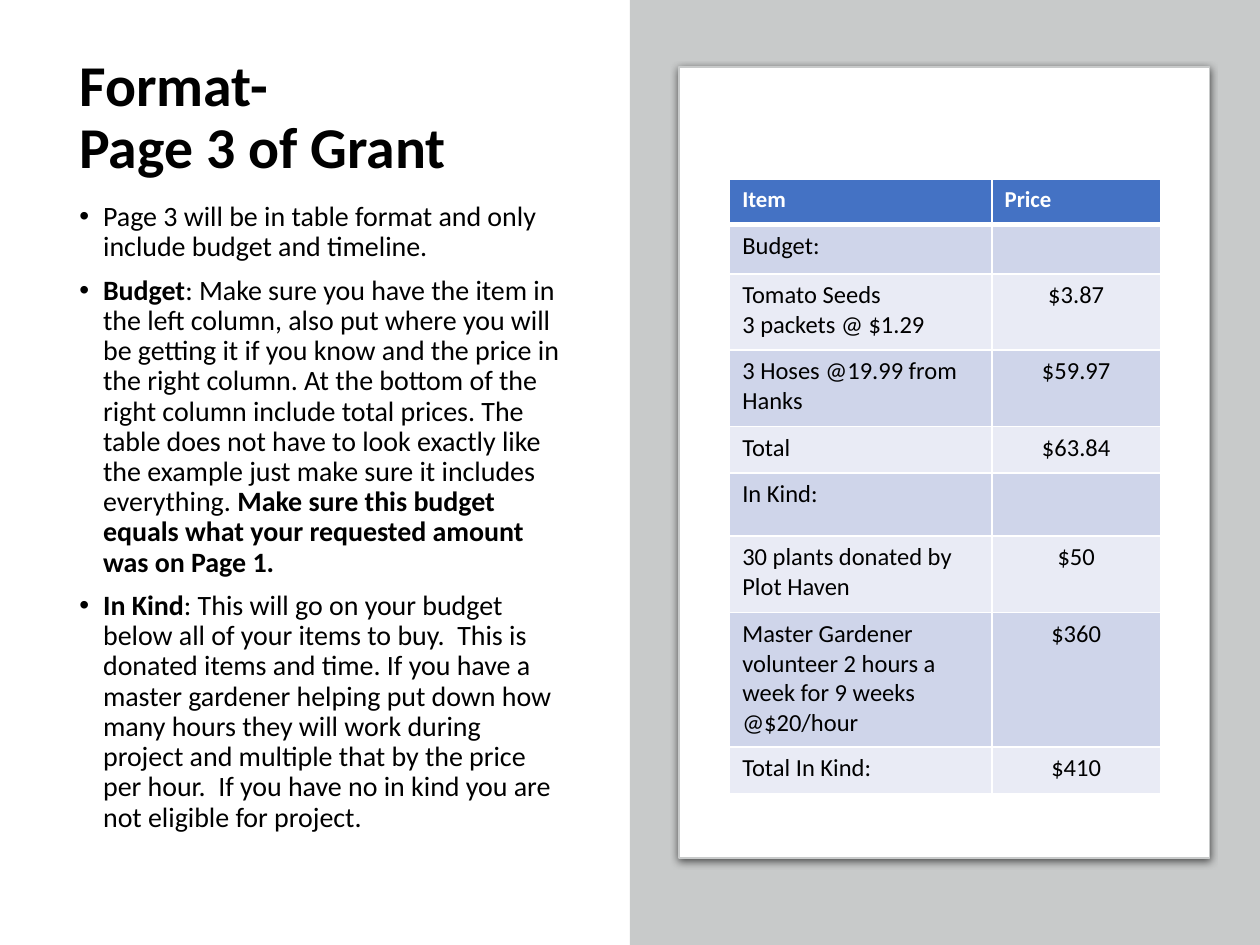
from lxml.etree import SubElement
from pptx import Presentation
from pptx.dml.color import RGBColor
from pptx.enum.shapes import MSO_SHAPE
from pptx.enum.text import MSO_ANCHOR, PP_ALIGN
from pptx.oxml import parse_xml
from pptx.oxml.ns import nsdecls, qn
from pptx.util import Cm, Pt

BLACK = RGBColor(0x00, 0x00, 0x00)
WHITE = RGBColor(0xFF, 0xFF, 0xFF)
GRAY = RGBColor(0xC8, 0xCA, 0xCA)
BLUE = RGBColor(0x44, 0x72, 0xC4)
BANDS = (RGBColor(0xE9, 0xEB, 0xF5), RGBColor(0xCF, 0xD5, 0xEA))
FONT = "Calibri"

TITLE = [("Format- \vPage 3 of Grant", True)]
BULLETS = [
    [("Page 3 will be in table format and only include budget and timeline.", False)],
    [
        ("Budget", True),
        (": Make sure you have the item in the left column, also put where you will be "
         "getting it if you know and the price in the right column. At the bottom of the "
         "right column include total prices. The table does not have to look exactly like "
         "the example just make sure it includes everything. ", False),
        ("Make sure this budget equals what your requested amount was on Page 1.", True),
    ],
    [
        ("In Kind", True),
        (": This will go on your budget below all of your items to buy.  This is donated "
         "items and time. If you have a master gardener helping put down how many hours "
         "they will work during project and multiple that by the price per hour.  If you "
         "have no in kind you are not eligible for project.", False),
    ],
]
BUDGET_ROWS = [
    ("Item", "Price", 0.92),
    ("Budget:", "", 0.99),
    ("Tomato Seeds\n3 packets @ $1.29", "$3.87", 1.54),
    ("3 Hoses @19.99 from Hanks", "$59.97", 1.54),
    ("Total", "$63.84", 0.94),
    ("In Kind:", "", 1.27),
    ("30 plants donated by Plot Haven", "$50", 1.54),
    ("Master Gardener volunteer 2 hours a week for 9 weeks @$20/hour", "$360", 2.71),
    ("Total In Kind:", "$410", 0.94),
]
COLUMN_WIDTHS = (5.29, 3.39)


def format_font(font, size, color, bold):
    font.name = FONT
    font.size = Pt(size)
    font.color.rgb = color
    font.bold = bold


def add_panel(slide, kind, left, top, width, height, fill):
    shape = slide.shapes.add_shape(kind, Cm(left), Cm(top), Cm(width), Cm(height))
    shape.shadow.inherit = False
    shape.fill.solid()
    shape.fill.fore_color.rgb = fill
    shape.line.fill.background()
    return shape


def add_text(slide, top, height, paragraphs, size):
    box = slide.shapes.add_textbox(Cm(1.35), Cm(top), Cm(10.31), Cm(height))
    frame = box.text_frame
    frame.word_wrap = True
    for index, parts in enumerate(paragraphs):
        paragraph = frame.add_paragraph() if index else frame.paragraphs[0]
        paragraph.text = "".join(text for text, _ in parts) if len(parts) == 1 else ""
        paragraph.line_spacing = 0.9
        if len(parts) > 1:
            for text, _ in parts:
                paragraph.add_run().text = text
        for position, run in enumerate(paragraph.runs):
            bold = parts[min(position, len(parts) - 1)][1]
            format_font(run.font, size, BLACK, bold)
    return frame


def add_bullet(paragraph):
    paragraph.space_before = Pt(7.5)
    properties = paragraph._p.get_or_add_pPr()
    properties.set("marL", str(Cm(0.48)))
    properties.set("indent", str(-Cm(0.48)))
    SubElement(properties, qn("a:buFont"), typeface="Arial")
    SubElement(properties, qn("a:buChar"), char="•")


def set_borders(cell, widths):
    properties = cell._tc.get_or_add_tcPr()
    for index, (side, width) in enumerate(zip("LRTB", widths)):
        properties.insert(index, parse_xml(
            f'<a:ln{side} {nsdecls("a")} w="{Pt(width)}"><a:solidFill>'
            f'<a:srgbClr val="{WHITE}"/></a:solidFill></a:ln{side}>'))


def add_budget_table(slide):
    heights = [row[2] for row in BUDGET_ROWS]
    table = slide.shapes.add_table(
        len(BUDGET_ROWS), len(COLUMN_WIDTHS), Cm(14.71), Cm(3.61),
        Cm(sum(COLUMN_WIDTHS)), Cm(sum(heights))).table
    for column, width in zip(table.columns, COLUMN_WIDTHS):
        column.width = Cm(width)
    for row_index, (item, price, height) in enumerate(BUDGET_ROWS):
        table.rows[row_index].height = Cm(height)
        header = row_index == 0
        for column_index, text in enumerate((item, price)):
            cell = table.cell(row_index, column_index)
            cell.fill.solid()
            cell.fill.fore_color.rgb = BLUE if header else BANDS[row_index % 2]
            set_borders(cell, (1, 1, 3 if row_index == 1 else 1, 3 if header else 1))
            cell.text_frame.text = text
            for paragraph in cell.text_frame.paragraphs:
                if column_index == 1 and not header:
                    paragraph.alignment = PP_ALIGN.CENTER
                size, color = (13, WHITE) if header else (14, BLACK)
                if not text:
                    paragraph.font.size = Pt(size)
                for run in paragraph.runs:
                    format_font(run.font, size, color, header)


def main():
    presentation = Presentation()
    presentation.slide_width = Cm(25.4)
    presentation.slide_height = Cm(19.05)
    slide = presentation.slides.add_slide(presentation.slide_layouts[6])
    slide.background.fill.solid()
    slide.background.fill.fore_color.rgb = WHITE

    add_panel(slide, MSO_SHAPE.RECTANGLE, 12.7, 0, 12.7, 19.05, GRAY)
    card = add_panel(slide, MSO_SHAPE.ROUNDED_RECTANGLE, 13.69, 1.35, 10.69, 15.95, WHITE)
    card.adjustments[0] = 0
    card.line.color.rgb = GRAY
    card.line.width = Pt(0.75)
    effects = card._element.spPr.find(qn("a:effectLst"))
    effects.append(parse_xml(
        f'<a:outerShdw {nsdecls("a")} blurRad="{Pt(4.5)}" dist="{Pt(1.5)}" dir="5400000" '
        f'algn="t" rotWithShape="0"><a:srgbClr val="{BLACK}"><a:alpha val="63000"/>'
        '</a:srgbClr></a:outerShdw>'))

    title = add_text(slide, 0.84, 3.12, [TITLE], 33)
    title.vertical_anchor = MSO_ANCHOR.MIDDLE
    body = add_text(slide, 3.96, 13.31, BULLETS, 16)
    for paragraph in body.paragraphs:
        add_bullet(paragraph)
    add_budget_table(slide)
    presentation.save("out.pptx")


if __name__ == "__main__":
    main()
